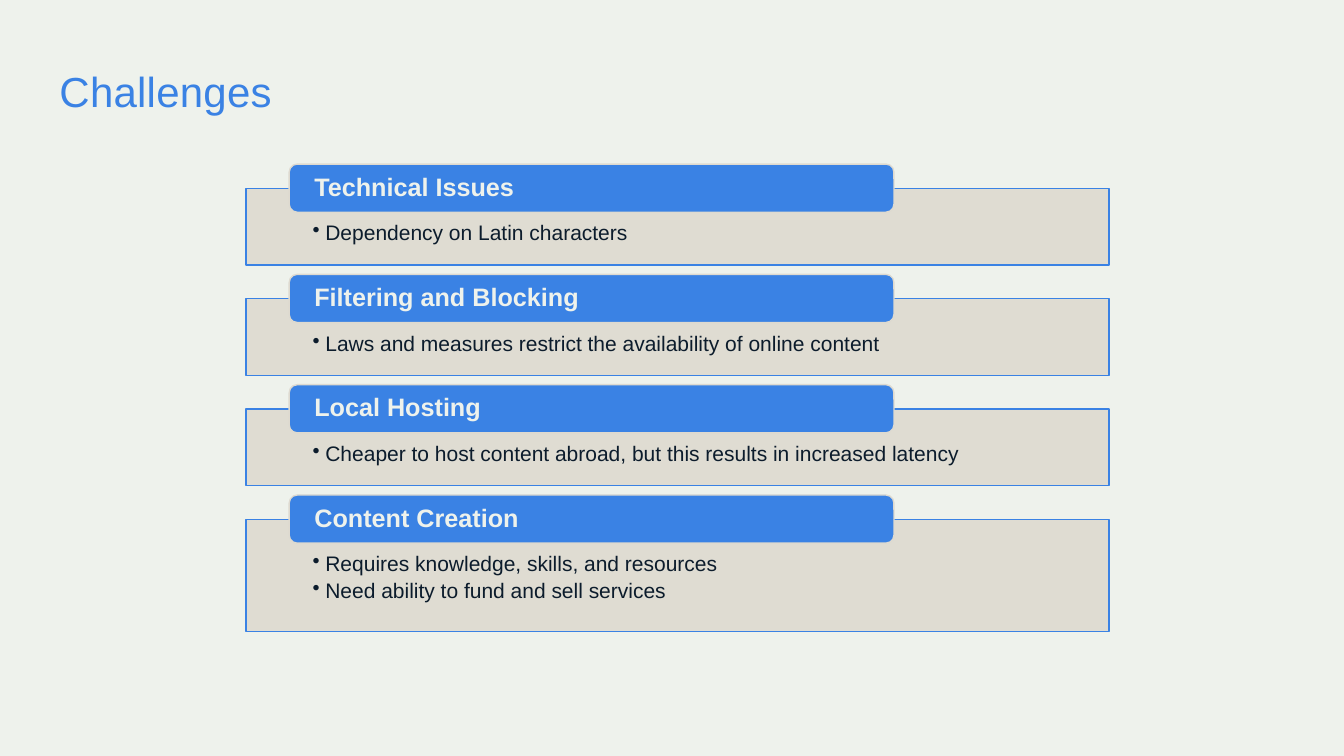
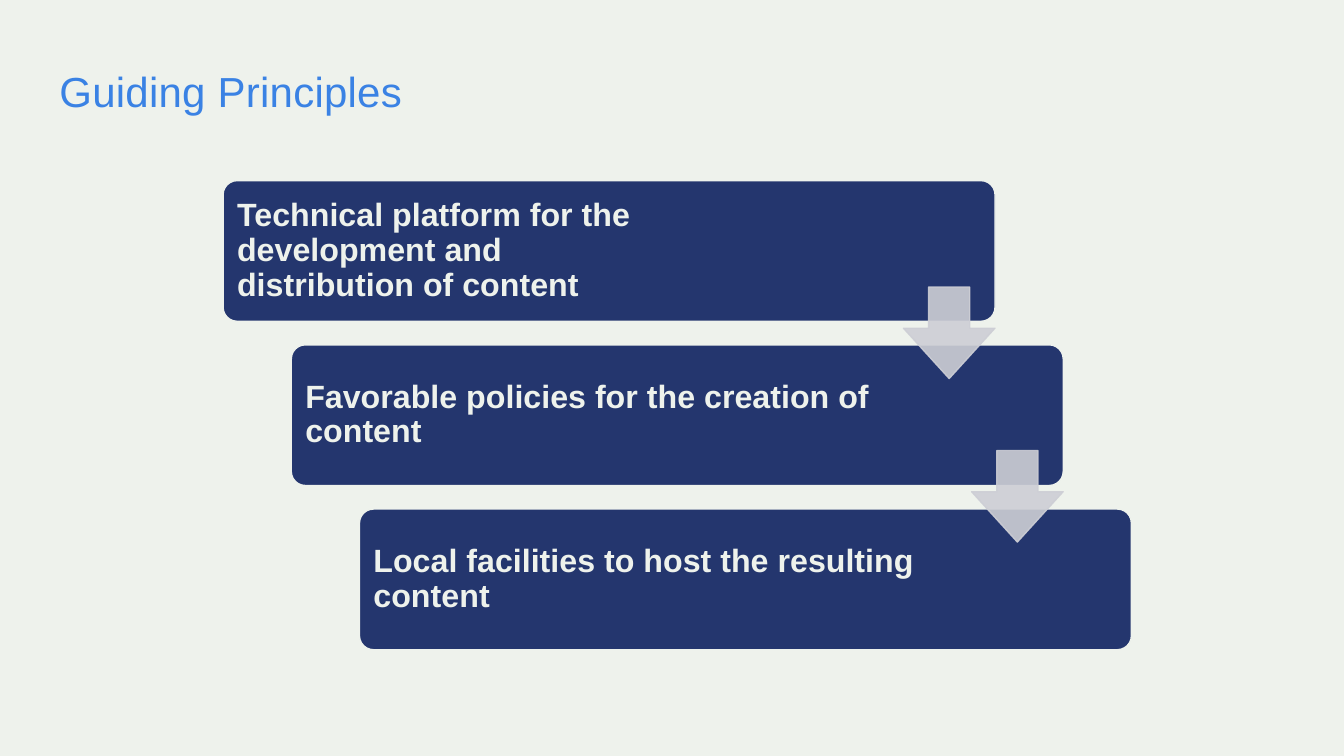
from lxml.etree import SubElement
from pptx import Presentation
from pptx.dml.color import RGBColor
from pptx.enum.shapes import MSO_SHAPE
from pptx.enum.text import MSO_ANCHOR, PP_ALIGN
from pptx.oxml.ns import qn
from pptx.util import Pt

FONT = "Arial"
PAPER, BLUE, NAVY = "EEF2EC", "3A82E4", "24366E"
SAND, SILVER, INK = "DEDAD0", "CDCED5", "0C1C2C"

CHALLENGES = [
    ("Technical Issues", ["Dependency on Latin characters"]),
    ("Filtering and Blocking",
     ["Laws and measures restrict the availability of online content"]),
    ("Local Hosting",
     ["Cheaper to host content abroad, but this results in increased latency"]),
    ("Content Creation",
     ["Requires knowledge, skills, and resources",
      "Need ability to fund and sell services"]),
]
# Each principle with the right inset of its text
PRINCIPLES = [
    ("Technical platform for the development and \vdistribution of content", 110),
    ("Favorable policies for the creation of content", 121.6),
    ("Local facilities to host the resulting content", 121.6),
]


def color(value):
    return RGBColor.from_string(value)


def write(shape, lines, size, ink, bold=False, bullet=False, insets=(0, 0, 0, 0),
          anchor=MSO_ANCHOR.TOP, line_spacing=0.9, space_after=0, tracking=None):
    """Fill a shape with one paragraph per line; insets are left, top, right, bottom."""
    frame = shape.text_frame
    frame.word_wrap = True
    frame.vertical_anchor = anchor
    (frame.margin_left, frame.margin_top,
     frame.margin_right, frame.margin_bottom) = map(Pt, insets)
    for index, line in enumerate(lines):
        paragraph = frame.add_paragraph() if index else frame.paragraphs[0]
        paragraph.text = line
        paragraph.alignment = PP_ALIGN.LEFT
        paragraph.line_spacing = line_spacing
        paragraph.space_after = Pt(space_after)
        if bullet:
            properties = paragraph._p.get_or_add_pPr()
            properties.set("marL", str(Pt(9)))
            properties.set("indent", str(-Pt(9)))
            SubElement(properties, qn("a:buChar"), char="•")
        for run in paragraph.runs:
            run.font.name = FONT
            run.font.size = Pt(size)
            run.font.bold = bold
            run.font.color.rgb = color(ink)
            if tracking:
                run.font._element.set("spc", str(tracking))


def add_box(slide, kind, left, top, width, height, fill, line,
            fill_alpha=100, line_alpha=100, adjustments=()):
    shape = slide.shapes.add_shape(kind, Pt(left), Pt(top), Pt(width), Pt(height))
    shape.shadow.inherit = False
    shape.fill.solid()
    shape.fill.fore_color.rgb = color(fill)
    shape.line.color.rgb = color(line)
    shape.line.width = Pt(1)
    for index, value in enumerate(adjustments):
        shape.adjustments[index] = value
    properties = shape._element.spPr
    for place, alpha in (("a:solidFill", fill_alpha), ("a:ln/a:solidFill", line_alpha)):
        if alpha < 100:
            for tint in properties.xpath(f"{place}/a:srgbClr"):
                SubElement(tint, qn("a:alpha"), val=str(alpha * 1000))
    return shape


def add_slide(presentation, title):
    slide = presentation.slides.add_slide(presentation.slide_layouts[6])
    slide.background.fill.solid()
    slide.background.fill.fore_color.rgb = color(PAPER)
    box = slide.shapes.add_textbox(Pt(42.5), Pt(44.6), Pt(875.5), Pt(42.5))
    write(box, [title], 30, BLUE, line_spacing=1.06, tracking=20)
    return slide


def add_challenges(slide):
    gap, overhang, extra_line = 24.1, 17.4, 25.2
    top = 134.6
    for heading, points in CHALLENGES:
        height = 54.7 + extra_line * (len(points) - 1)
        panel = add_box(slide, MSO_SHAPE.RECTANGLE, 175.6, top, 616.6, height,
                        SAND, BLUE, fill_alpha=90)
        write(panel, points, 15, INK, bullet=True,
              insets=(47.8, 24.6, 47.8, 8.6), space_after=2.8)
        header = add_box(slide, MSO_SHAPE.ROUNDED_RECTANGLE, 206.6, top - overhang,
                         432, 34.4, BLUE, SAND)
        write(header, [heading], 18, PAPER, bold=True,
              insets=(16.3, 0, 16.3, 0), anchor=MSO_ANCHOR.MIDDLE)
        top += height + gap


def add_principles(slide):
    step_right = 48.7
    for index, (text, right_inset) in enumerate(PRINCIPLES):
        box = add_box(slide, MSO_SHAPE.ROUNDED_RECTANGLE,
                      159.4 + index * step_right, 129 + index * 117.3,
                      551.4, 100.5, NAVY, PAPER, adjustments=[0.1])
        write(box, [text], 23, PAPER, bold=True,
              insets=(7.2, 7.2, right_inset, 7.2), anchor=MSO_ANCHOR.MIDDLE)
    for index in range(len(PRINCIPLES) - 1):
        add_box(slide, MSO_SHAPE.DOWN_ARROW,
                645.3 + index * step_right, 205 + index * 116.8, 65.4, 65.4,
                SILVER, SILVER, fill_alpha=90, line_alpha=90,
                adjustments=[0.45, 0.55])


def main():
    presentation = Presentation()
    presentation.slide_width, presentation.slide_height = Pt(960), Pt(540)
    add_challenges(add_slide(presentation, "Challenges"))
    add_principles(add_slide(presentation, "Guiding Principles"))
    presentation.save("out.pptx")


if __name__ == "__main__":
    main()
